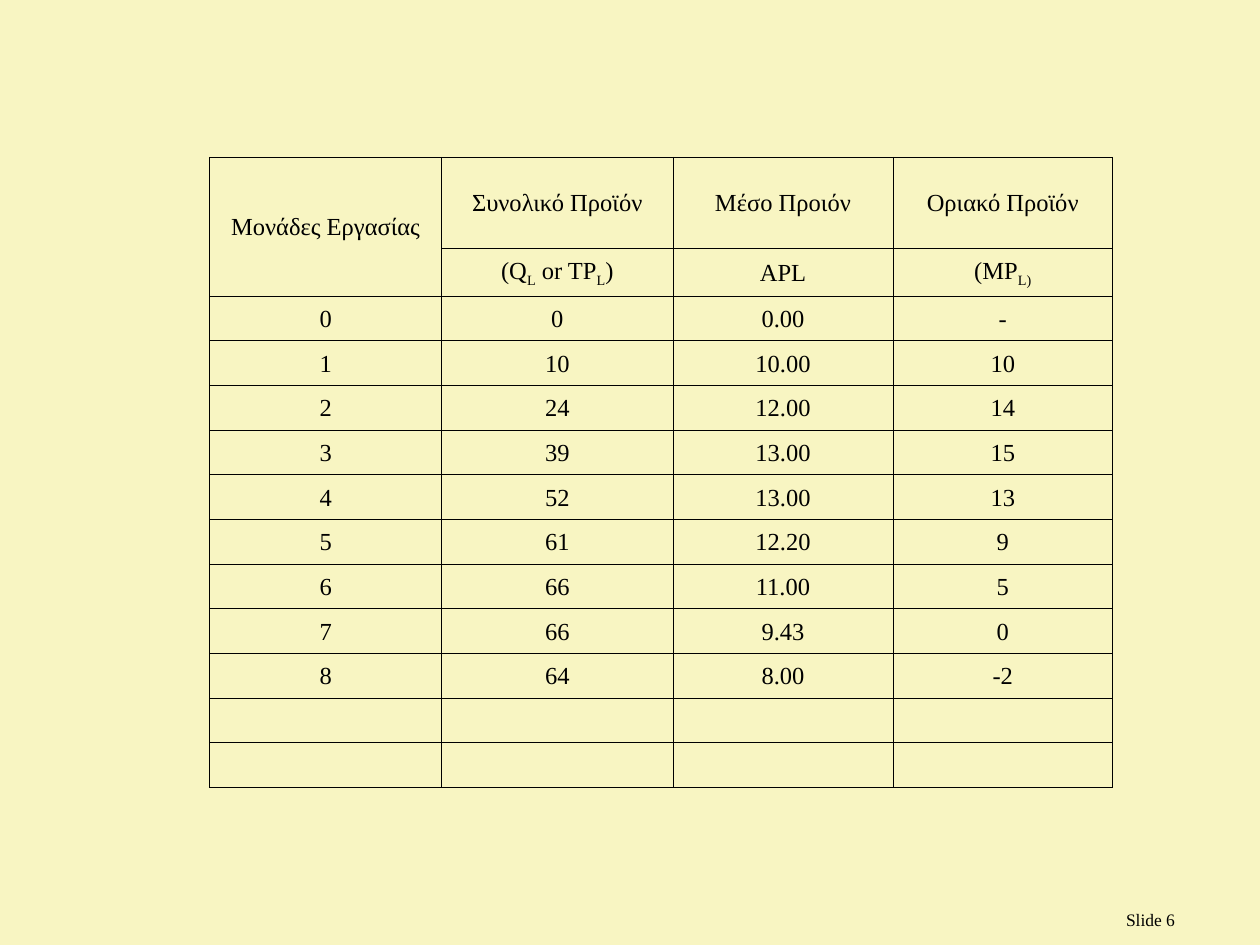
import lxml.etree
import pptx
import pptx.dml.color
import pptx.enum.text
import pptx.oxml.ns
import pptx.util

Cm, Pt = pptx.util.Cm, pptx.util.Pt
COLORS = {"background": "F8F5C2", "ink": "000000"}

# Each heading symbol is a list of (text, is_subscript) runs
SYMBOLS = [
    [],
    [("(Q", False), ("L", True), (" or TP", False), ("L", True), (")", False)],
    [("APL", False)],
    [("(MP", False), ("L)", True)],
]
HEADINGS = ["Μονάδες Εργασίας", "Συνολικό Προϊόν", "Μέσο Προιόν", "Οριακό Προϊόν"]
PRODUCTION = [
    ("0", "0", "0.00", "-"),
    ("1", "10", "10.00", "10"),
    ("2", "24", "12.00", "14"),
    ("3", "39", "13.00", "15"),
    ("4", "52", "13.00", "13"),
    ("5", "61", "12.20", "9"),
    ("6", "66", "11.00", "5"),
    ("7", "66", "9.43", "0"),
    ("8", "64", "8.00", "-2"),
]
SPARE_ROWS = [("",) * 4] * 2


def plain(texts):
    return [[(text, False)] if text else [] for text in texts]


class SlideBuilder:
    font_name = "Times New Roman"

    def __init__(self, presentation):
        self.slide = presentation.slides.add_slide(presentation.slide_layouts[6])

    def color(self, name):
        return pptx.dml.color.RGBColor.from_string(COLORS[name])

    def background(self, name):
        fill = self.slide.background.fill
        fill.solid()
        fill.fore_color.rgb = self.color(name)

    def add_runs(self, paragraph, runs, size):
        paragraph.font.name = self.font_name
        paragraph.font.size = Pt(size)
        paragraph.font.color.rgb = self.color("ink")
        for text, is_subscript in runs:
            run = paragraph.add_run()
            run.text = text
            if is_subscript:
                run._r.get_or_add_rPr().set("baseline", "-25000")

    def label(self, left, top, width, height, text, size):
        frame = self.slide.shapes.add_textbox(
            Cm(left), Cm(top), Cm(width), Cm(height)).text_frame
        frame.word_wrap = True
        self.add_runs(frame.paragraphs[0], [(text, False)], size)

    def borders(self, cell, width):
        properties = cell._tc.get_or_add_tcPr()
        qn = pptx.oxml.ns.qn
        for side in ("a:lnL", "a:lnR", "a:lnT", "a:lnB"):
            line = lxml.etree.SubElement(properties, qn(side), w=str(Pt(width)))
            fill = lxml.etree.SubElement(line, qn("a:solidFill"))
            lxml.etree.SubElement(fill, qn("a:srgbClr"), val=COLORS["ink"])

    def table(self, left, top, widths, heights, rows, size):
        grid = self.slide.shapes.add_table(
            len(heights), len(widths), Cm(left), Cm(top),
            Cm(sum(widths)), Cm(sum(heights))).table
        grid.first_row = grid.horz_banding = False
        for column, width in zip(grid.columns, widths):
            column.width = Cm(width)
        for row, height, contents in zip(grid.rows, heights, rows):
            row.height = Cm(height)
            for cell, runs in zip(row.cells, contents):
                self.borders(cell, 0.5)
                cell.fill.background()
                cell.margin_left = cell.margin_right = cell.margin_top = Cm(0.03)
                cell.margin_bottom = 0
                cell.vertical_anchor = pptx.enum.text.MSO_ANCHOR.MIDDLE
                paragraph = cell.text_frame.paragraphs[0]
                paragraph.alignment = pptx.enum.text.PP_ALIGN.CENTER
                self.add_runs(paragraph, runs, size)
        return grid


def main():
    presentation = pptx.Presentation()
    presentation.slide_width, presentation.slide_height = Cm(25.4), Cm(19.05)
    builder = SlideBuilder(presentation)
    builder.background("background")

    # Production table: two heading rows, then the data and two spare rows
    body = [plain(row) for row in PRODUCTION + SPARE_ROWS]
    production = builder.table(
        4.23, 3.17, [4.67, 4.67, 4.43, 4.43], [1.83, 0.97] + [0.9] * len(body),
        [plain(HEADINGS), SYMBOLS] + body, 14)
    production.cell(0, 0).merge(production.cell(1, 0))

    # Slide number
    builder.label(22.45, 18.21, 2.95, 0.69, "Slide 6", 10)

    presentation.save("out.pptx")


if __name__ == "__main__":
    main()
